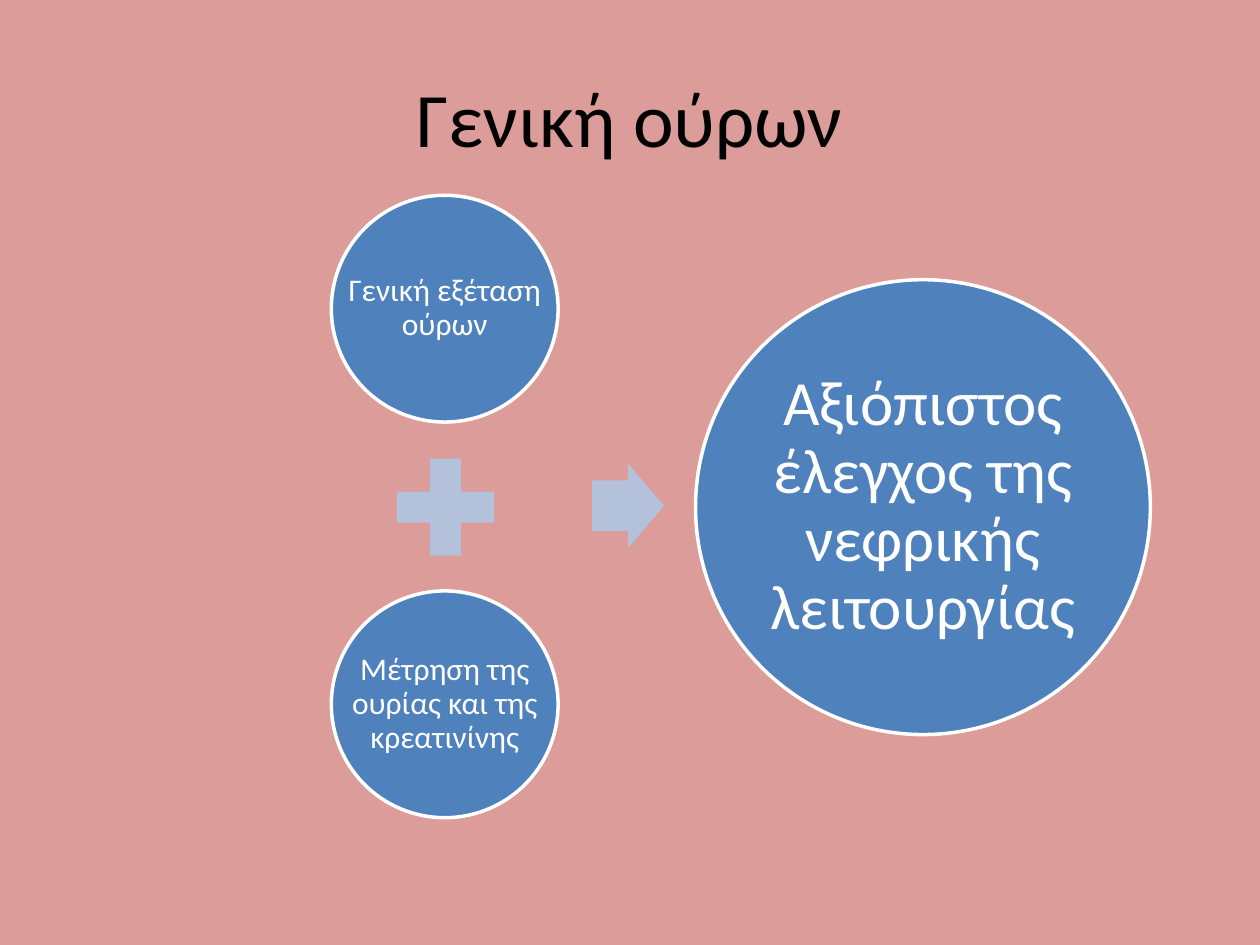
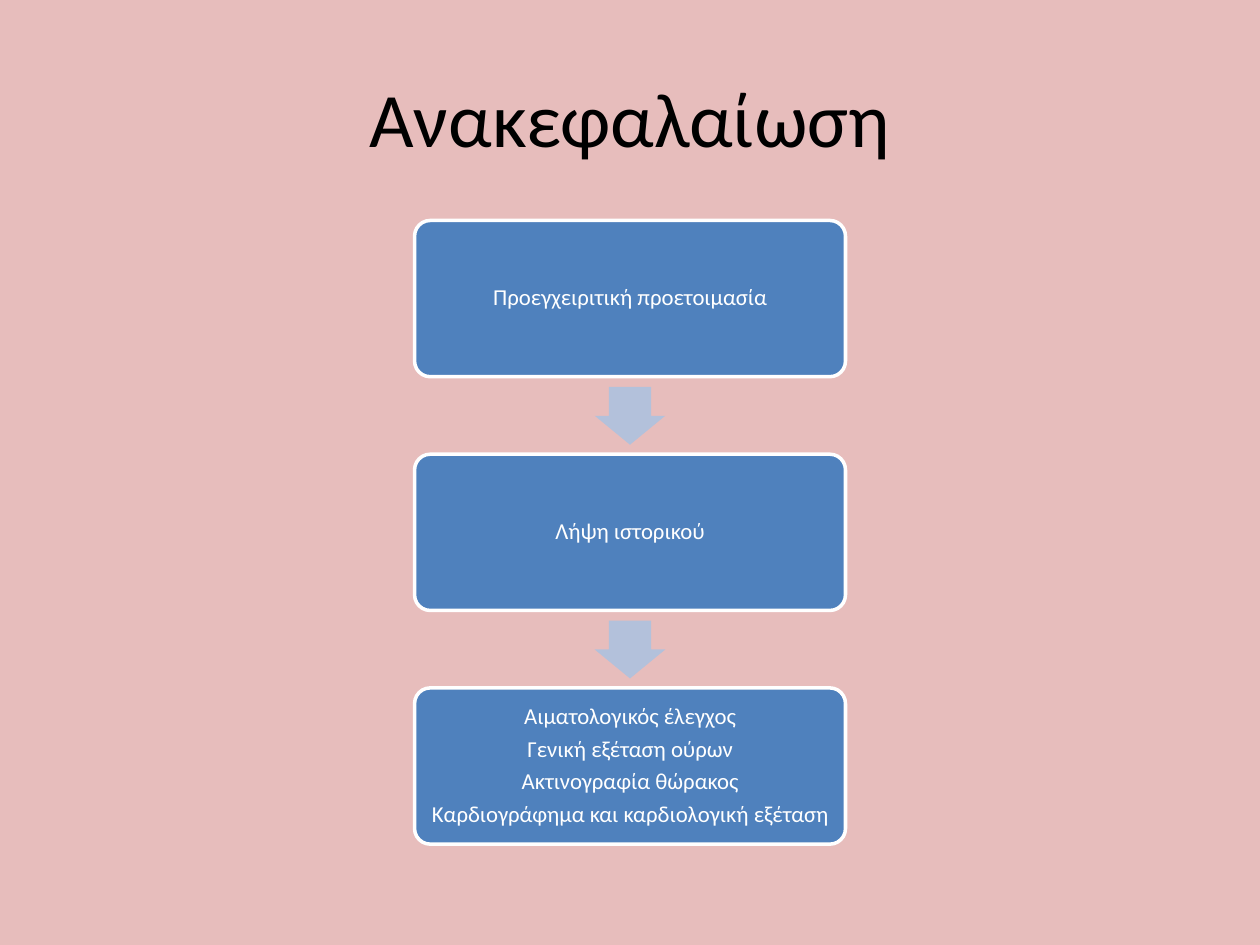
"""Two slides on preoperative tests: an equation of circles and a vertical process."""
from lxml import etree
from pptx import Presentation
from pptx.dml.color import RGBColor
from pptx.enum import shapes, text
from pptx.oxml import ns
from pptx.util import Inches, Pt

BLUE = RGBColor(0x4F, 0x81, 0xBD)
PALE_BLUE = RGBColor(0xB3, 0xC1, 0xDB)
WHITE = RGBColor(0xFF, 0xFF, 0xFF)
BLACK = RGBColor(0x00, 0x00, 0x00)
ROSE = RGBColor(0xD9, 0x96, 0x94)
PALE_ROSE = RGBColor(0xE6, 0xB9, 0xB8)
FONT = "Calibri"
MSO = shapes.MSO_SHAPE


def add_filled(slide, kind, box, fill, outlined=False):
    sp = slide.shapes.add_shape(kind, *map(Inches, box))
    sp.shadow.inherit = False
    sp.fill.solid()
    sp.fill.fore_color.rgb = fill
    if outlined:
        sp.line.color.rgb = WHITE
        sp.line.width = Pt(2)
    else:
        sp.line.fill.background()
    return sp


def write(sp, lines, size, color, inset=None):
    tf = sp.text_frame
    tf.word_wrap = True
    tf.vertical_anchor = text.MSO_ANCHOR.MIDDLE
    tf.text = "\n".join(lines)
    if inset is not None:
        tf.margin_left = tf.margin_right = Inches(inset)
        tf.margin_top = tf.margin_bottom = Inches(inset)
    for p in tf.paragraphs:
        p.alignment = text.PP_ALIGN.CENTER
        if inset is not None:
            p.line_spacing = 0.9
            p.space_after = Pt(round(size * 0.35, 1))
        for r in p.runs:
            r.font.name = FONT
            r.font.size = Pt(size)
            r.font.color.rgb = color


prs = Presentation()
prs.slide_width, prs.slide_height = Inches(10), Inches(7.5)

slides = []
for title, background in [("Γενική ούρων", ROSE), ("Ανακεφαλαίωση", PALE_ROSE)]:
    s = prs.slides.add_slide(prs.slide_layouts[5])
    s.background.fill.solid()
    s.background.fill.fore_color.rgb = background
    clr = s.element.find(".//" + ns.qn("p:bgPr")).find(".//" + ns.qn("a:srgbClr"))
    etree.SubElement(clr, ns.qn("a:alpha")).set("val", "94000")
    sp = s.shapes.title
    sp.left, sp.top, sp.width, sp.height = map(Inches, (0.5, 0.3, 9, 1.25))
    write(sp, [title], 44, BLACK)
    slides.append(s)
equation, process = slides

circles = [
    ("Γενική εξέταση ούρων", 2.63, 1.55, 1.8, 18, 0.03),
    ("Μέτρηση της ουρίας και της κρεατινίνης", 2.63, 4.69, 1.8, 18, 0.03),
    ("Αξιόπιστος έλεγχος της νεφρικής λειτουργίας", 5.52, 2.22, 3.61, 36, 0.05),
]
for label, left, top, side, size, inset in circles:
    box = (left, top, side, side)
    add_filled(equation, MSO.OVAL, box, BLUE, outlined=True)
    write(equation.shapes.add_textbox(*map(Inches, box)), [label], size, WHITE, inset)
add_filled(equation, MSO.MATH_PLUS, (3.01, 3.5, 1.05, 1.05), PALE_BLUE)
sp = add_filled(equation, MSO.RIGHT_ARROW, (4.7, 3.68, 0.57, 0.67), PALE_BLUE)
sp.adjustments[0] = 0.6

steps = [
    ["Προεγχειριτική προετοιμασία"],
    ["Λήψη ιστορικού"],
    ["Αιματολογικός έλεγχος", "Γενική εξέταση ούρων", "Ακτινογραφία θώρακος",
     "Καρδιογράφημα και καρδιολογική εξέταση"],
]
STEP_TOP, STEP_PITCH = 1.75, 1.855
for i, lines in enumerate(steps):
    top = STEP_TOP + i * STEP_PITCH
    sp = add_filled(process, MSO.ROUNDED_RECTANGLE, (3.29, top, 3.42, 1.24), BLUE, outlined=True)
    sp.adjustments[0] = 0.1
    write(sp, lines, 13, WHITE, 0.05)
    if i < len(steps) - 1:
        sp = add_filled(process, MSO.RIGHT_ARROW, (4.77, top + 1.27, 0.46, 0.56), PALE_BLUE)
        sp.adjustments[0] = 0.6
        sp.rotation = 90

prs.save("out.pptx")
